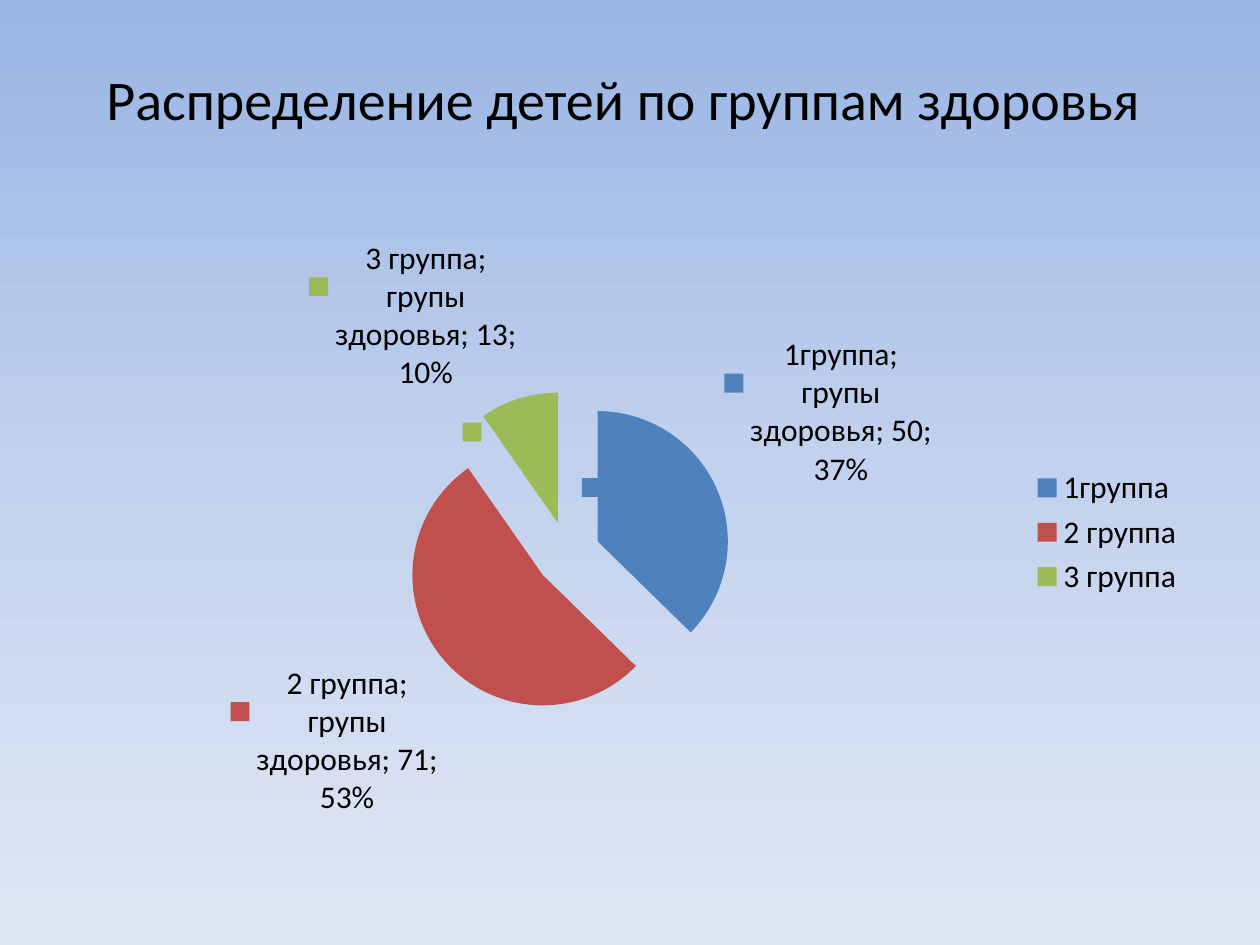
from copy import deepcopy

from lxml.etree import Element
from pptx import Presentation
from pptx.chart.data import CategoryChartData
from pptx.dml.color import RGBColor
from pptx.enum.chart import XL_CHART_TYPE as ChartType, XL_LEGEND_POSITION as LegendPosition
from pptx.enum.text import MSO_ANCHOR as Anchor, PP_ALIGN as Align
from pptx.oxml.ns import qn
from pptx.util import Inches, Pt

TITLE = "Распределение детей по группам здоровья "
SERIES_NAME = "групы здоровья"
GROUPS = [
    ("1группа", 50, "4F81BD"),
    ("2 группа", 71, "C0504D"),
    ("3 группа", 13, "9BBB59"),
]
BACKGROUND = [(0, "9AB5E4"), (0.5, "C2D1ED"), (1, "E1E8F5")]
TITLE_BOX = (0.5, 0.3, 9, 0.95)
CHART_BOX = (0.5, 1.75, 9, 4.95)
FONT, BLACK, EXPLOSION = "Calibri", "000000", 25


def set_color(color_format, value):
    """Set a colour from a hex string."""
    color_format.rgb = RGBColor.from_string(value)


def format_font(font, size, color=BLACK, name=FONT):
    """Set the face, size and colour of a font."""
    font.name, font.size = name, Pt(size)
    set_color(font.color, color)


def write_text(shape, text, size, align=Align.CENTER, anchor=Anchor.MIDDLE):
    """Write one formatted paragraph into a shape."""
    frame = shape.text_frame
    frame.word_wrap, frame.vertical_anchor = True, anchor
    paragraph = frame.paragraphs[0]
    paragraph.alignment = align
    run = paragraph.add_run()
    run.text = text
    format_font(run.font, size)


def paint_background(slide):
    """Fill the background with a downward gradient of three stops."""
    fill = slide.background.fill
    fill.gradient()
    fill.gradient_angle = 270
    first = fill._fill._gradFill.find(qn("a:gsLst"))[0]
    first.addnext(deepcopy(first))
    for stop, (position, color) in zip(fill.gradient_stops, BACKGROUND):
        stop.position = position
        set_color(stop.color, color)


def add_pie(slide):
    """Add the exploded pie with its labels and legend."""
    names, values, colors = zip(*GROUPS)
    data = CategoryChartData()
    data.categories = names
    data.add_series(SERIES_NAME, values)
    chart = slide.shapes.add_chart(ChartType.PIE, *map(Inches, CHART_BOX), data).chart
    format_font(chart.font, 18)
    chart.has_title = False
    chart.has_legend = True
    chart.legend.position = LegendPosition.RIGHT
    chart.legend.include_in_layout = False

    plot = chart.plots[0]
    plot.vary_by_categories = True
    series = plot.series[0]
    explosion = Element(qn("c:explosion"), val=str(EXPLOSION))
    series._element.find(qn("c:tx")).addnext(explosion)
    for index, color in enumerate(colors):
        fill = series.points[index].format.fill
        fill.solid()
        set_color(fill.fore_color, color)

    labels = series.data_labels
    labels.show_legend_key = labels.show_category_name = labels.show_series_name = True
    labels.show_value = labels.show_percentage = True


def main():
    """Build and save the slide."""
    presentation = Presentation()
    presentation.slide_width, presentation.slide_height = Inches(10), Inches(7.5)
    slide = presentation.slides.add_slide(presentation.slide_layouts[5])
    paint_background(slide)
    title = slide.shapes.title
    title.left, title.top, title.width, title.height = map(Inches, TITLE_BOX)
    write_text(title, TITLE, 32)
    add_pie(slide)
    presentation.save("out.pptx")


if __name__ == "__main__":
    main()
